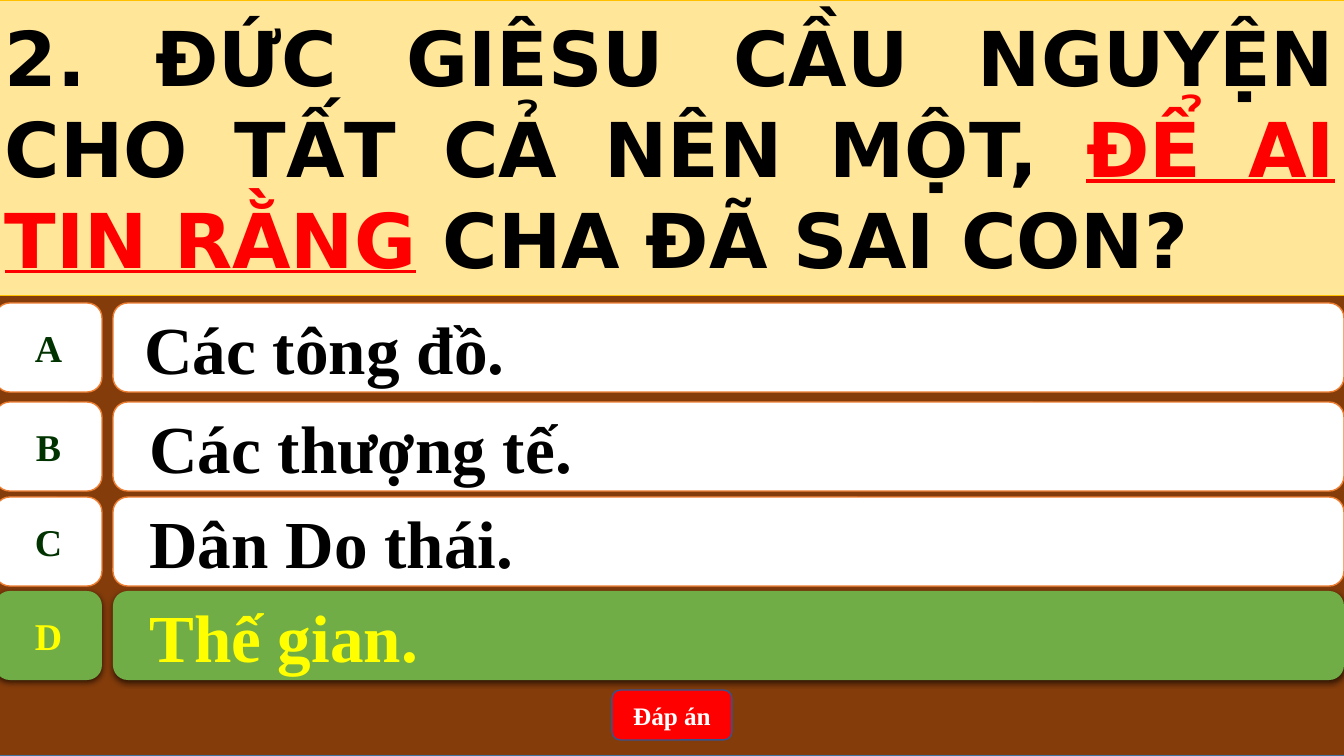
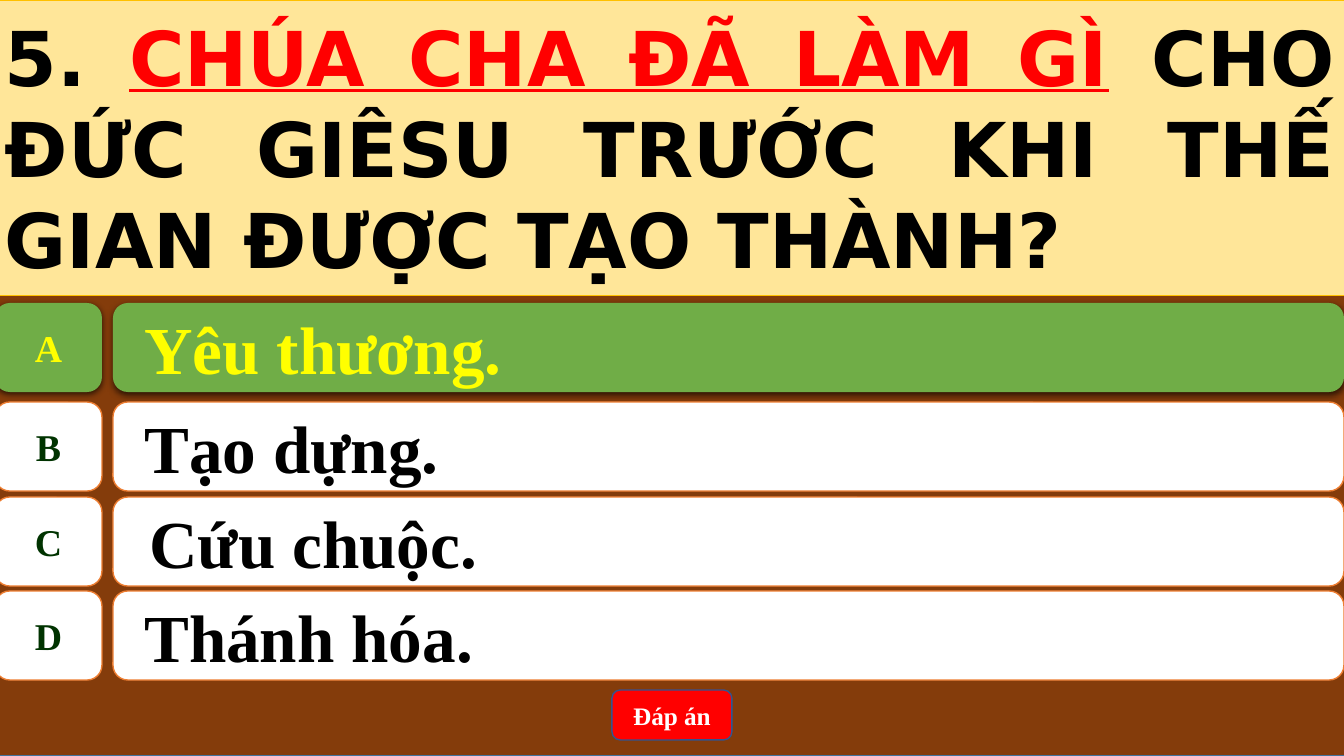
"""Build two Vietnamese multiple-choice quiz slides with the right answer highlighted."""
import pptx
import pptx.dml.color
import pptx.enum.shapes
import pptx.enum.text
import pptx.util
from dataclasses import dataclass
from lxml import etree

SHAPE = pptx.enum.shapes.MSO_SHAPE
ALIGN = pptx.enum.text.PP_ALIGN
ANCHOR = pptx.enum.text.MSO_ANCHOR
EMU_PER_PX = 914400 / 100.8
NS = "http://schemas.openxmlformats.org/drawingml/2006/main"


@dataclass(frozen=True)
class Theme:
    """Colours, fonts and type sizes shared by the slides."""
    brown: str = "843C0B"
    frame: str = "43739E"
    cream: str = "FFE699"
    gold: str = "FFC000"
    white: str = "FFFFFF"
    orange: str = "ED7D31"
    green: str = "70AD47"
    yellow: str = "FFFF00"
    red: str = "FF0000"
    navy: str = "325491"
    dark_green: str = "003300"
    black: str = "000000"
    question_font: str = "DejaVu Sans"
    answer_font: str = "Times New Roman"
    question_size: int = 54
    answer_size: int = 48
    letter_size: int = 27
    button_size: int = 18


THEME = Theme()
SLIDE_SIZE = (1344, 756)
BACKGROUND_BOX = (-5, 0, 1350, 756)
QUESTION_BOX = (-5, 0, 1350, 295)
BUTTON_BOX = (612, 690, 120, 50)
LETTER_LEFT, LETTER_WIDTH = -5, 107
ANSWER_LEFT, ANSWER_WIDTH = 113, 1231
ROW_TOPS = (303, 402, 497, 591)
ROW_HEIGHT = 89
NEAR, FAR = 27, 32

QUIZ = [
    {
        "question": ("2. ĐỨC GIÊSU CẦU NGUYỆN CHO TẤT CẢ NÊN MỘT, ",
                     "ĐỂ AI TIN RẰNG", " CHA ĐÃ SAI CON?"),
        "answers": [("Các tông đồ.", NEAR), ("Các thượng tế.", FAR),
                    ("Dân Do thái.", FAR), ("Thế gian.", FAR)],
        "correct": "D",
    },
    {
        "question": ("5. ", "CHÚA CHA ĐÃ LÀM GÌ",
                     " CHO ĐỨC GIÊSU TRƯỚC KHI THẾ GIAN ĐƯỢC TẠO THÀNH?"),
        "answers": [("Yêu thương.", NEAR), ("Tạo dựng.", NEAR),
                    ("Cứu chuộc.", FAR), ("Thánh hóa.", NEAR)],
        "correct": "A",
    },
]


def px(n):
    return pptx.util.Emu(round(n * EMU_PER_PX))


def rgb(color):
    return pptx.dml.color.RGBColor.from_string(color)


def add_box(slide, kind, box, fill, line=None, width=1):
    sp = slide.shapes.add_shape(kind, *map(px, box))
    sp.fill.solid()
    sp.fill.fore_color.rgb = rgb(fill)
    if line:
        sp.line.color.rgb = rgb(line)
        sp.line.width = pptx.util.Pt(width)
    else:
        sp.line.fill.background()
    sp.shadow.inherit = False
    return sp


def add_shadow(sp):
    effects = sp.element.spPr.find(f"{{{NS}}}effectLst")
    shadow = etree.SubElement(
        effects, f"{{{NS}}}outerShdw", blurRad=str(pptx.util.Pt(4.5)),
        dist=str(pptx.util.Pt(1.5)), dir="5400000", algn="ctr", rotWithShape="0")
    color = etree.SubElement(shadow, f"{{{NS}}}srgbClr", val=THEME.black)
    etree.SubElement(color, f"{{{NS}}}alpha", val="63000")


def write(sp, runs, font, size, align, wrap=True, left=10):
    tf = sp.text_frame
    tf.word_wrap = wrap
    tf.vertical_anchor = ANCHOR.MIDDLE
    tf.margin_left = px(left)
    p = tf.paragraphs[0]
    p.alignment = align
    for text, color, underline in runs:
        r = p.add_run()
        r.text = text
        r.font.name = font
        r.font.size = pptx.util.Pt(size)
        r.font.bold = True
        r.font.underline = underline
        r.font.color.rgb = rgb(color)


def add_row(slide, top, letter, answer, left, correct):
    fill, line = (THEME.green, None) if correct else (THEME.white, THEME.orange)
    bar = add_box(slide, SHAPE.ROUNDED_RECTANGLE,
                  (ANSWER_LEFT, top, ANSWER_WIDTH, ROW_HEIGHT), fill, line)
    badge = add_box(slide, SHAPE.FLOWCHART_ALTERNATE_PROCESS,
                    (LETTER_LEFT, top, LETTER_WIDTH, ROW_HEIGHT), fill, line)
    if correct:
        add_shadow(bar)
        add_shadow(badge)
    answer_color = THEME.yellow if correct else THEME.black
    letter_color = THEME.yellow if correct else THEME.dark_green
    write(bar, [(answer, answer_color, False)], THEME.answer_font,
          THEME.answer_size, ALIGN.LEFT, left=left)
    write(badge, [(letter, letter_color, False)], THEME.answer_font,
          THEME.letter_size, ALIGN.CENTER, wrap=False)


def add_quiz_slide(prs, quiz):
    slide = prs.slides.add_slide(prs.slide_layouts[6])
    add_box(slide, SHAPE.RECTANGLE, BACKGROUND_BOX, THEME.brown, THEME.frame)

    before, key, after = quiz["question"]
    sp = add_box(slide, SHAPE.RECTANGLE, QUESTION_BOX, THEME.cream, THEME.gold, 0.5)
    write(sp, [(before, THEME.black, False), (key, THEME.red, True),
               (after, THEME.black, False)],
          THEME.question_font, THEME.question_size, ALIGN.JUSTIFY)

    for top, letter, (answer, left) in zip(ROW_TOPS, "ABCD", quiz["answers"]):
        add_row(slide, top, letter, answer, left, letter == quiz["correct"])

    sp = add_box(slide, SHAPE.ROUNDED_RECTANGLE, BUTTON_BOX, THEME.red, THEME.navy)
    write(sp, [("Đáp án", THEME.white, False)], THEME.answer_font,
          THEME.button_size, ALIGN.CENTER)


def main():
    prs = pptx.Presentation()
    prs.slide_width, prs.slide_height = map(px, SLIDE_SIZE)
    for quiz in QUIZ:
        add_quiz_slide(prs, quiz)
    prs.save("out.pptx")


if __name__ == "__main__":
    main()
